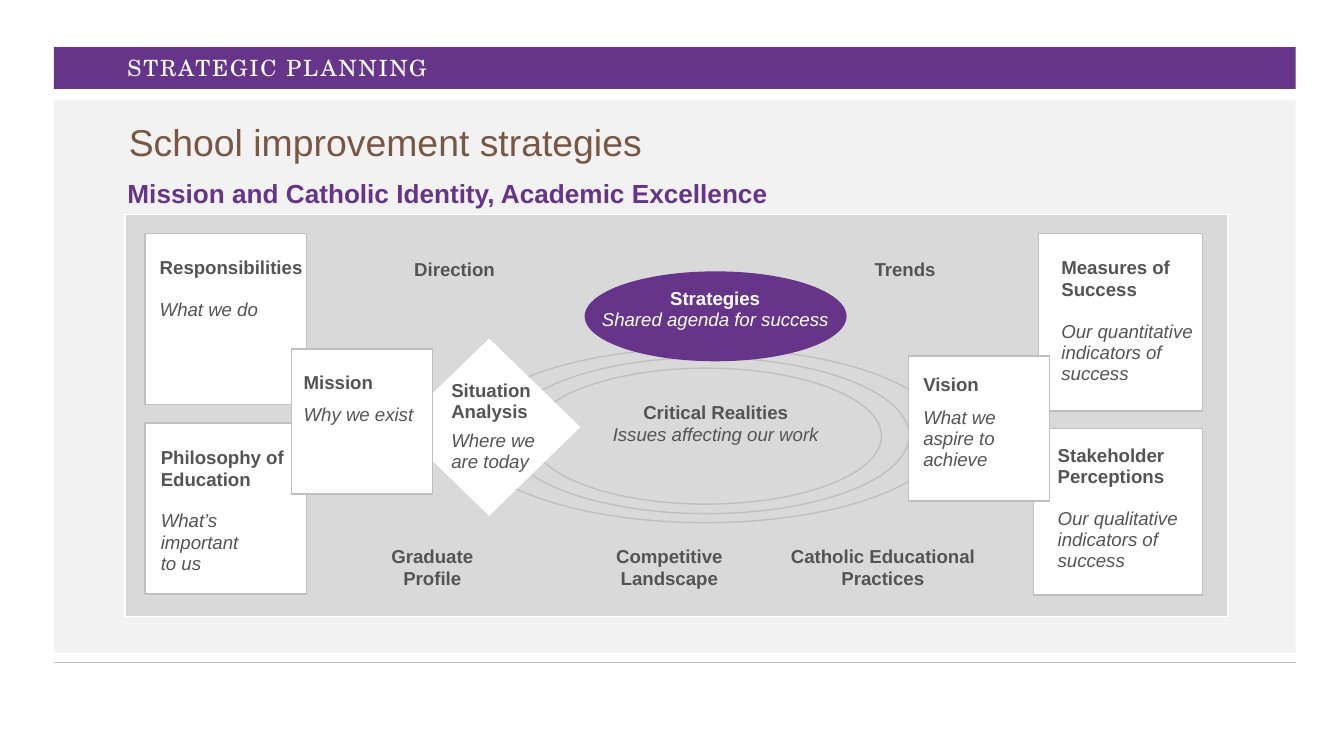
from dataclasses import dataclass
from typing import Optional

import pptx
import pptx.dml.color
import pptx.enum.shapes
import pptx.enum.text
import pptx.util
from lxml import etree
from pptx.dml.color import RGBColor

Cm = pptx.util.Cm
Pt = pptx.util.Pt
Shape = pptx.enum.shapes.MSO_SHAPE
Align = pptx.enum.text.PP_ALIGN
Anchor = pptx.enum.text.MSO_ANCHOR

PURPLE = RGBColor(0x66, 0x34, 0x88)
BROWN = RGBColor(0x78, 0x57, 0x44)
DARK = RGBColor(0x54, 0x54, 0x54)
RULE = RGBColor(0xBF, 0xBF, 0xBF)
FRAME = RGBColor(0xD9, 0xD9, 0xD9)
PANEL = RGBColor(0xF2, 0xF2, 0xF2)
WHITE = RGBColor(0xFF, 0xFF, 0xFF)

LEFT, WIDTH = 1.02, 23.47
BLANK_LINE = 11


@dataclass(frozen=True)
class Box:
    left: float
    top: float
    width: float
    height: float

    def lengths(self) -> tuple:
        return Cm(self.left), Cm(self.top), Cm(self.width), Cm(self.height)


@dataclass(frozen=True)
class Topic:
    heading: str
    detail: str
    area: Box
    gap: float = 0
    align: Align = Align.LEFT
    color: RGBColor = DARK
    card: Optional[Box] = None
    outline: Shape = Shape.RECTANGLE
    fill: RGBColor = WHITE
    line: Optional[RGBColor] = RULE


def draw_shape(slide, kind: Shape, box: Box, fill: Optional[RGBColor] = None,
               line: Optional[RGBColor] = None) -> None:
    shape = slide.shapes.add_shape(kind, *box.lengths())
    shape.shadow.inherit = False
    if fill is None:
        shape.fill.background()
    else:
        shape.fill.solid()
        shape.fill.fore_color.rgb = fill
    if line is None:
        shape.line.fill.background()
    else:
        shape.line.color.rgb = line
        shape.line.width = Pt(0.75)


def write(paragraph, text: str, *, size: float = 10, font: str = "Arial", color: RGBColor = DARK,
          bold: bool = False, italic: bool = False, align: Align = Align.LEFT,
          leading: float = 0.95, after: float = 0, tracking: int = 0) -> None:
    paragraph.text = text
    paragraph.alignment = align
    paragraph.line_spacing = leading
    paragraph.space_before = Pt(0)
    paragraph.space_after = Pt(after)
    for run in paragraph.runs:
        run.font.size = Pt(size)
        run.font.name = font
        run.font.bold = bold
        run.font.italic = italic
        run.font.color.rgb = color
        if tracking:
            run.font._element.set("spc", str(tracking))


def add_frame(slide, area: Box, anchor: Anchor = Anchor.TOP):
    frame = slide.shapes.add_textbox(*area.lengths()).text_frame
    frame.word_wrap = True
    frame.vertical_anchor = anchor
    return frame


def draw_topic(slide, topic: Topic) -> None:
    if topic.card:
        draw_shape(slide, topic.outline, topic.card, topic.fill, topic.line)
    frame = add_frame(slide, topic.area)
    write(frame.paragraphs[0], topic.heading, bold=True, color=topic.color,
          align=topic.align, after=topic.gap)
    if topic.detail:
        write(frame.add_paragraph(), topic.detail, italic=True, color=topic.color,
              align=topic.align)


def draw_rule(slide, top: float) -> None:
    rule = slide.shapes.add_connector(pptx.enum.shapes.MSO_CONNECTOR.STRAIGHT,
                                      Cm(LEFT), Cm(top), Cm(LEFT + WIDTH), Cm(top))
    rule.line.color.rgb = RULE
    rule.line.width = Pt(0.75)
    etree.SubElement(rule.element.spPr, pptx.oxml.ns.qn("a:effectLst"))


def place_title(slide, text: str, area: Box) -> None:
    title = slide.shapes.title
    title.left, title.top, title.width, title.height = area.lengths()
    title.text_frame.word_wrap = True
    title.text_frame.vertical_anchor = Anchor.MIDDLE
    write(title.text_frame.paragraphs[0], text, size=20, color=BROWN, leading=0.85)
    slide.shapes.element.append(title.element)


RINGS = [
    Box(9.53, 6.76, 7.65, 2.95),
    Box(8.81, 6.58, 9.04, 3.3),
    Box(10.03, 6.96, 6.63, 2.57),
]

TOPICS = [
    Topic("Measures of Success", "Our quantitative indicators of success",
          Box(19.81, 4.75, 3.2, 2.64), BLANK_LINE, card=Box(19.63, 4.42, 3.1, 3.35)),
    Topic("Stakeholder Perceptions", "Our qualitative indicators of success",
          Box(19.74, 8.29, 3.2, 2.84), BLANK_LINE, card=Box(19.53, 8.1, 3.2, 3.15)),
    Topic("Critical Realities", "Issues affecting our work",
          Box(10.31, 7.49, 6.43, 1.75), align=Align.CENTER),
    Topic("Situation Analysis", "Where we\nare today", Box(8.28, 7.06, 2.44, 2.44), 4,
          card=Box(7.52, 6.4, 3.45, 3.35), outline=Shape.DIAMOND, line=None),
    Topic("Strategies", "Shared agenda for success", Box(10.34, 5.33, 6.35, 1.5),
          align=Align.CENTER, color=WHITE, card=Box(11.05, 5.13, 4.95, 1.7),
          outline=Shape.OVAL, fill=PURPLE, line=None),
    Topic("Responsibilities", "What we do",
          Box(2.77, 4.75, 3.2, 2.03), BLANK_LINE, card=Box(2.74, 4.42, 3.05, 3.23)),
    Topic("Philosophy of Education", "What’s\nimportant\nto us",
          Box(2.79, 8.34, 3.2, 2.54), BLANK_LINE, card=Box(2.74, 8, 3.05, 3.23)),
    Topic("Mission", "Why we exist",
          Box(5.49, 6.91, 2.87, 2.18), 6, card=Box(5.51, 6.6, 2.67, 2.74)),
    Topic("Vision", "What we aspire to achieve",
          Box(17.2, 6.96, 2.87, 2.18), 6, card=Box(17.17, 6.73, 2.67, 2.74)),
    Topic("Direction", "", Box(7.14, 4.78, 2.9, 0.66), align=Align.CENTER),
    Topic("Trends", "", Box(15.72, 4.78, 2.77, 0.66), align=Align.CENTER),
    Topic("Graduate Profile", "", Box(6.71, 10.21, 2.92, 1.07), align=Align.CENTER),
    Topic("Competitive Landscape", "", Box(10.49, 10.21, 4.32, 1.07), align=Align.CENTER),
    Topic("Catholic Educational Practices", "", Box(14.6, 10.21, 4.17, 1.07),
          align=Align.CENTER),
]


def main() -> None:
    deck = pptx.Presentation()
    deck.slide_width, deck.slide_height = Cm(25.4), Cm(14.29)
    slide = deck.slides.add_slide(deck.slide_layouts[5])

    draw_shape(slide, Shape.RECTANGLE, Box(LEFT, 1.9, WIDTH, 10.44), PANEL)
    draw_shape(slide, Shape.RECTANGLE, Box(2.36, 4.06, 20.85, 7.59), FRAME, WHITE)
    draw_shape(slide, Shape.RECTANGLE, Box(LEFT, 0.89, WIDTH, 0.79), PURPLE)
    section = add_frame(slide, Box(2.16, 0.79, 9.88, 1.04), Anchor.MIDDLE)
    write(section.paragraphs[0], "STRATEGIC PLANNING", size=12, font="TeX Gyre Schola",
          color=WHITE, leading=0.85, tracking=100)
    draw_rule(slide, 12.52)
    place_title(slide, "School improvement strategies", Box(2.18, 2.13, 12.62, 1.22))
    focus = add_frame(slide, Box(2.16, 3.23, 16.05, 0.86))
    write(focus.paragraphs[0], "Mission and Catholic Identity, Academic Excellence",
          size=14, color=PURPLE, bold=True, leading=1.0)

    for ring in RINGS:
        draw_shape(slide, Shape.OVAL, ring, line=RULE)
    for topic in TOPICS:
        draw_topic(slide, topic)

    deck.save("out.pptx")


if __name__ == "__main__":
    main()
